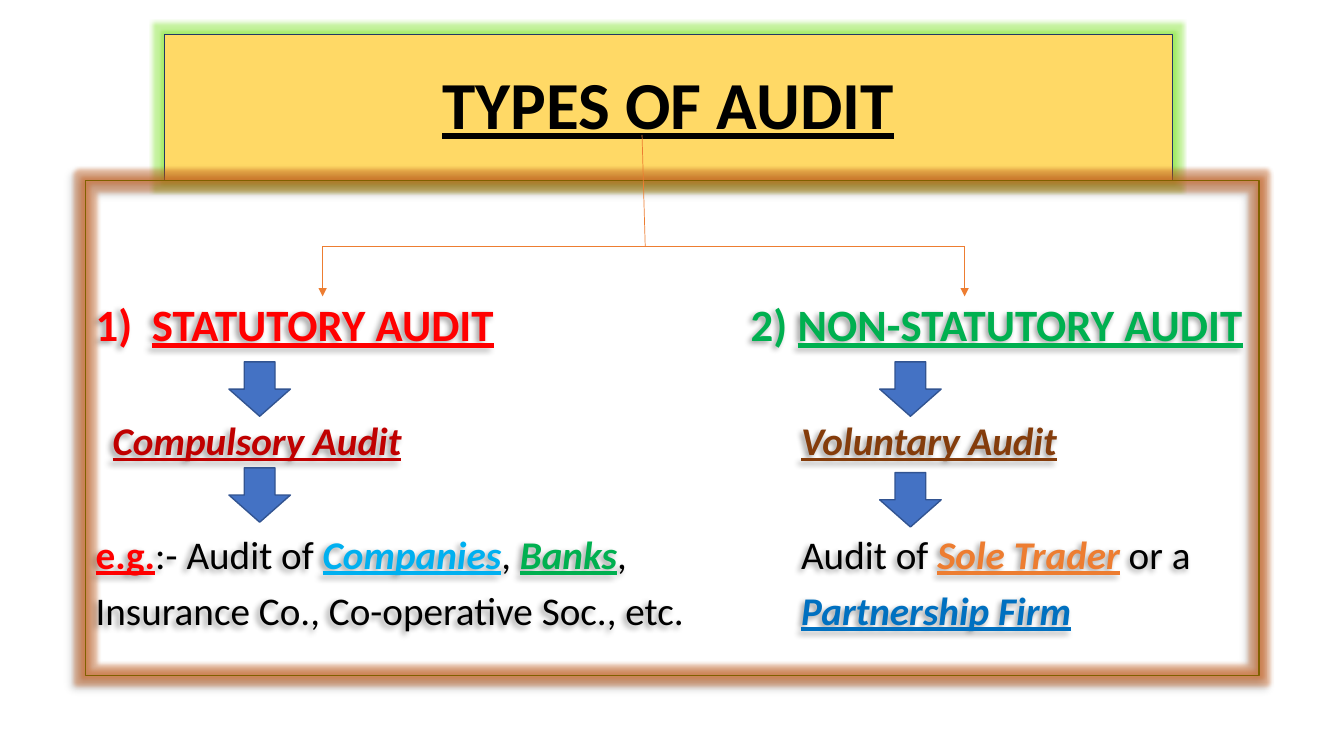
"""Build the "Types of audit" slide."""
from lxml.etree import SubElement
from pptx import Presentation
from pptx.dml.color import RGBColor
from pptx.enum.shapes import MSO_CONNECTOR, MSO_SHAPE
from pptx.enum.text import MSO_ANCHOR, PP_ALIGN
from pptx.oxml.ns import qn
from pptx.util import Cm, Pt

BLACK = RGBColor(0x00, 0x00, 0x00)
GOLD = RGBColor(0xFF, 0xD9, 0x66)
NAVY = RGBColor(0x20, 0x38, 0x64)
OLIVE = RGBColor(0x80, 0x60, 0x00)
RED = RGBColor(0xFF, 0x00, 0x00)
DARK_RED = RGBColor(0xC0, 0x00, 0x00)
GREEN = RGBColor(0x00, 0xB0, 0x50)
BROWN = RGBColor(0x84, 0x3C, 0x0B)
SKY = RGBColor(0x00, 0xB0, 0xF0)
ORANGE = RGBColor(0xED, 0x7D, 0x31)
BLUE = RGBColor(0x00, 0x70, 0xC0)
ARROW_FILL = RGBColor(0x44, 0x72, 0xC4)
ARROW_LINE = RGBColor(0x32, 0x54, 0x91)
GREEN_GLOW = RGBColor(0x70, 0xE0, 0x10)
ORANGE_GLOW = RGBColor(0xD0, 0x60, 0x1A)


def add_effect(shape, tag, color, **attributes):
    effects = shape.element.spPr.find(qn("a:effectLst"))
    effect = SubElement(effects, qn(tag), attributes)
    shade = SubElement(effect, qn("a:srgbClr"), val=str(color))
    SubElement(shade, qn("a:alpha"), val="40000")


def add_block(kind, left, top, width, height, fill, line, line_width):
    shape = slide.shapes.add_shape(kind, Cm(left), Cm(top), Cm(width), Cm(height))
    shape.shadow.inherit = False
    if fill is None:
        shape.fill.background()
    else:
        shape.fill.solid()
        shape.fill.fore_color.rgb = fill
    if line is None:
        shape.line.fill.background()
    else:
        shape.line.color.rgb = line
        shape.line.width = Pt(line_width)
    return shape


presentation = Presentation()
presentation.slide_width = Cm(33.87)
presentation.slide_height = Cm(19.05)
slide = presentation.slides.add_slide(presentation.slide_layouts[6])

title = add_block(MSO_SHAPE.RECTANGLE, 4.14, 0.86, 25.4, 3.69, GOLD, NAVY, 0.75)
add_effect(title, "a:glow", GREEN_GLOW, rad="63500")
title.text_frame.vertical_anchor = MSO_ANCHOR.MIDDLE
paragraph = title.text_frame.paragraphs[0]
paragraph.text = "TYPES OF AUDIT"
paragraph.alignment = PP_ALIGN.CENTER
paragraph.line_spacing = 0.9
paragraph.font.name = "Calibri"
paragraph.font.size = Pt(48)
paragraph.font.bold = True
paragraph.font.underline = True
paragraph.font.color.rgb = BLACK

BODY_TOP, BODY_HEIGHT = 4.55, 12.47
body = add_block(MSO_SHAPE.RECTANGLE, 2.16, BODY_TOP, 29.57, BODY_HEIGHT,
                 None, OLIVE, 0.75)
add_effect(body, "a:glow", ORANGE_GLOW, rad="63500")
right_column = add_block(MSO_SHAPE.RECTANGLE, 18.67, BODY_TOP, 13.06, BODY_HEIGHT,
                         None, None, 0)

# style letters: b bold, i italic, u underline
LEFT_ROWS = [
    (1.42, -1.42, [("STATUTORY AUDIT", RED, "bu")]),
    (0.43, 0, [("Compulsory Audit", DARK_RED, "biu")]),
    (0, 0, [("e.g.", RED, "bu"), (":- Audit of ", BLACK, ""),
            ("Companies", SKY, "biu"), (", ", BLACK, ""),
            ("Banks", GREEN, "biu"), (",", BLACK, "")]),
    (0, 0, [("Insurance Co., Co-operative Soc., etc.", BLACK, "")]),
]
RIGHT_ROWS = [
    (0, 0, [("2) ", GREEN, "b"), ("NON-STATUTORY AUDIT", GREEN, "bu")]),
    (1.27, 0, [("Voluntary Audit", BROWN, "biu")]),
    (1.27, 0, [("Audit of ", BLACK, ""), ("Sole Trader", ORANGE, "biu"),
               (" or a", BLACK, "")]),
    (1.27, 0, [("Partnership Firm", BLUE, "biu")]),
]
SIZES = [32, 28, 28, 28]
SPACES = [0, 50.7, 50.7, 10]
for column, rows in [(body, LEFT_ROWS), (right_column, RIGHT_ROWS)]:
    add_effect(column, "a:outerShdw", BLACK, blurRad="50800", dist="38100",
               dir="8100000", algn="tr", rotWithShape="0")
    frame = column.text_frame
    frame.word_wrap = True
    frame.vertical_anchor = MSO_ANCHOR.TOP
    frame.margin_top = Cm(3.07)
    for index, (margin, indent, runs) in enumerate(rows):
        paragraph = frame.add_paragraph() if index else frame.paragraphs[0]
        paragraph.alignment = PP_ALIGN.LEFT
        paragraph.line_spacing = 0.9
        paragraph.space_before = Pt(SPACES[index])
        properties = paragraph._p.get_or_add_pPr()
        properties.set("marL", str(Cm(margin)))
        properties.set("indent", str(Cm(indent)))
        if indent:
            SubElement(properties, qn("a:buAutoNum"), type="arabicParenR")
        paragraph.font.name = "Calibri"
        paragraph.font.size = Pt(SIZES[index])
        for text, color, style in runs:
            run = paragraph.add_run()
            run.text = text
            run.font.color.rgb = color
            run.font.bold = "b" in style
            run.font.italic = "i" in style
            run.font.underline = "u" in style

LEFT_BRANCH, RIGHT_BRANCH, BAR, BRANCH_END = 8.13, 24.31, 6.2, 7.47
BRANCHES = [
    (16.18, 3.4, 16.26, BAR, False),
    (LEFT_BRANCH, BAR, RIGHT_BRANCH, BAR, False),
    (LEFT_BRANCH, BAR, LEFT_BRANCH, BRANCH_END, True),
    (RIGHT_BRANCH, BAR, RIGHT_BRANCH, BRANCH_END, True),
]
for x1, y1, x2, y2, has_head in BRANCHES:
    connector = slide.shapes.add_connector(
        MSO_CONNECTOR.STRAIGHT, Cm(x1), Cm(y1), Cm(x2), Cm(y2))
    connector.line.color.rgb = ORANGE
    connector.line.width = Pt(0.5)
    if has_head:
        SubElement(connector.line._get_or_add_ln(), qn("a:tailEnd"), type="triangle")
    SubElement(connector.element.spPr, qn("a:effectLst"))

for left, top in [(5.77, 9.12), (22.17, 9.12), (5.77, 11.79), (22.17, 11.91)]:
    add_block(MSO_SHAPE.DOWN_ARROW, left, top, 1.55, 1.37, ARROW_FILL, ARROW_LINE, 1)

presentation.save("out.pptx")
